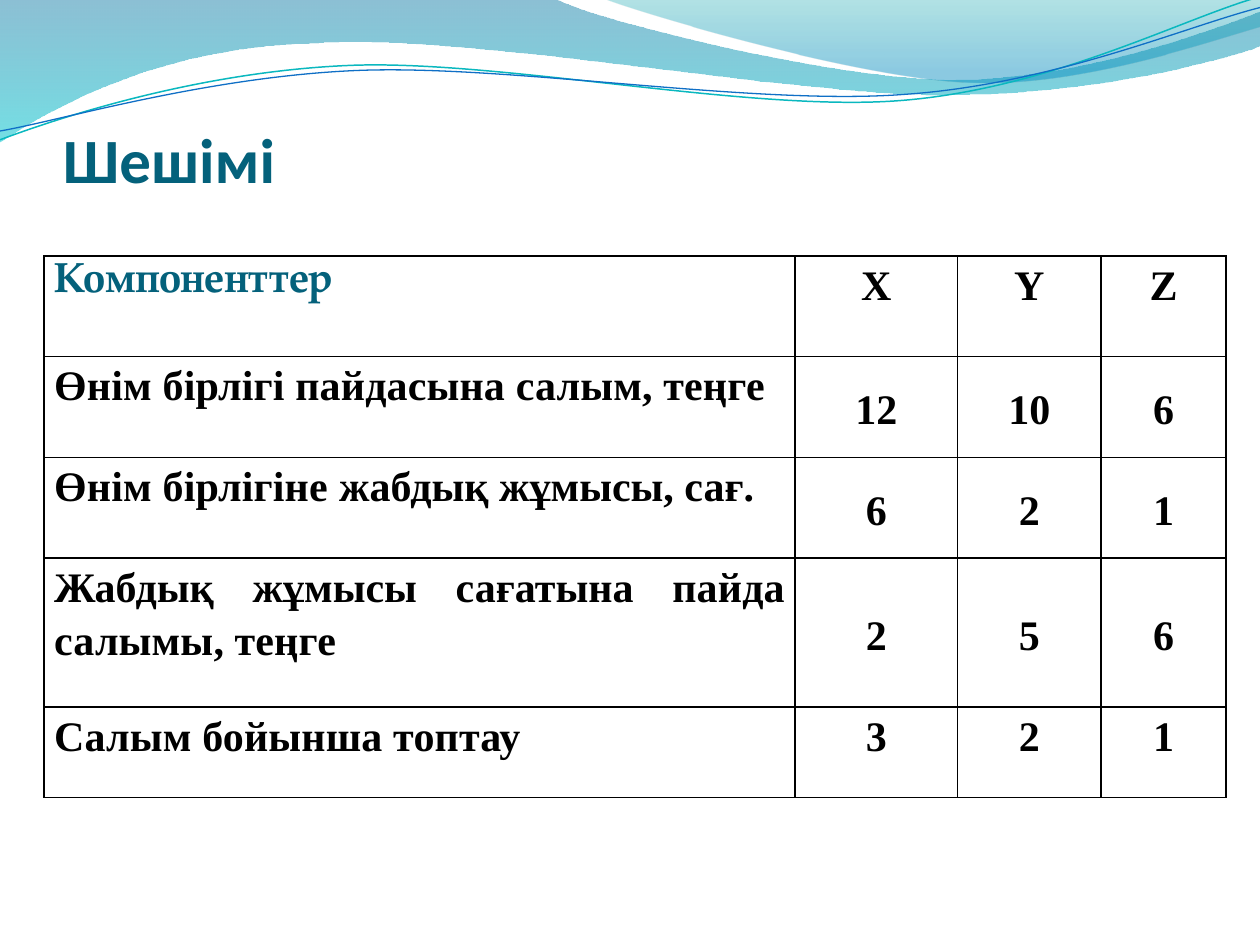
"""Build the solution slide: a wave header, a title and a table of components."""
import itertools
import lxml.etree
import pptx
import pptx.dml.color
import pptx.enum.text
import pptx.oxml.ns
import pptx.util

Inches = pptx.util.Inches
Align = pptx.enum.text.PP_ALIGN
Anchor = pptx.enum.text.MSO_ANCHOR
name = pptx.oxml.ns.qn

THEME = {
    "accent": "04617B", "ink": "000000", "title": 36, "body": 24, "rule": 1,
    "sans": "Calibri", "serif": "Times New Roman", "head": "TeX Gyre Pagella",
    "dark": [(0, "0074A1", 45), (1, "00C6CF", 55)],
    "pale": [(0, "00A1A9", 30), (0.8, "008BBF", 45)],
    "teal": ("0AB8BF", 0.85), "blue": ("0F6FC6", 0.75),
}
WIDE = 10
TITLE = "Шешімі"
HEAD = ["Компоненттер", [("X", WIDE)], [("Y", WIDE)], [("Z", WIDE)]]
BODY = [
    [[("Өнім бірлігі пайдасына салым, теңге", WIDE)], "12", "10", "6"],
    [[("Өнім бірлігіне ", WIDE), ("жабдық жұмысы, сағ.", 0)], "6", "2", "1"],
    [[("Жабдық жұмысы сағатына ", 0), ("пайда салымы", WIDE), (", ", 0),
      ("теңге", WIDE)], "2", "5", "6"],
    [[("Салым бойынша топтау ", WIDE)], "3", "2", "1"],
]
COLS = [5.96, 1.29, 1.14, 0.99]
ROWS = [0.8, 0.8, 0.8, 1.18, 0.72]
WAVES = [
    ("dark", [
        [(0, 0)], [(4.4, -0.01)],
        [(4.76, 0.17), (6.64, 0.63), (7.58, 0.63)],
        [(8.53, 0.63), (9.58, 0.26), (10, 0.09)], [(10.01, 0.36)],
        [(9.83, 0.44), (8.7, 0.76), (7.46, 0.75)],
        [(6.22, 0.75), (3.82, 0.28), (2.57, 0.34)],
        [(1.29, 0.36), (0.46, 0.83), (-0.01, 1.13)], [(0, 0)]]),
    ("pale", [
        [(4.79, -0.01)],
        [(5.09, 0.11), (6.82, 0.62), (7.69, 0.65)],
        [(8.56, 0.69), (9.61, 0.32), (10, 0.21)], [(10, 0)], [(4.79, -0.01)]]),
    ("teal", [
        [(0, 1.11)],
        [(0.48, 0.93), (1.58, 0.57), (2.77, 0.52)],
        [(3.95, 0.47), (5.93, 0.89), (7.13, 0.8)],
        [(8.33, 0.71), (9.38, 0.15), (9.98, -0.02)]]),
    ("blue", [
        [(0, 1.04)],
        [(0.47, 0.96), (1.64, 0.61), (2.83, 0.56)],
        [(4.03, 0.51), (5.97, 0.84), (7.17, 0.75)],
        [(8.36, 0.67), (9.41, 0.21), (10, 0.06)]]),
]


def rgb(code):
    """Return a colour from its hex code."""
    return pptx.dml.color.RGBColor.from_string(code)


def sub(node, tag, **attrs):
    """Add a drawing element below a node."""
    return lxml.etree.SubElement(node, name("a:" + tag), **attrs)


def write(frame, text, size, font, color="ink", align=Align.LEFT, space=1, kern=0):
    """Write one bold paragraph, given as text or as (text, spacing) parts."""
    para = frame.paragraphs[0]
    para.alignment, para.line_spacing = align, space
    for part, gap in [(text, 0)] if isinstance(text, str) else text:
        run = para.add_run()
        run.text = part
        run.font.size, run.font.bold = pptx.util.Pt(THEME[size]), True
        run.font.name = THEME[font]
        run.font.color.rgb = rgb(THEME[color])
        props = run._r.get_or_add_rPr()
        if gap:
            props.set("spc", str(gap))
        if kern:
            props.set("kern", str(kern))


def bend(shape, segs):
    """Join each triple of line steps into one cubic curve."""
    steps = list(shape.element.iter(name("a:lnTo")))
    for seg in segs[1:]:
        group, steps = steps[:len(seg)], steps[len(seg):]
        if len(seg) == 3:
            curve = lxml.etree.Element(name("a:cubicBezTo"))
            group[0].addprevious(curve)
            for step in group:
                curve.append(step[0])
                step.getparent().remove(step)


def wave(slide, style, segs):
    """Draw a shaded band or a thin open curve."""
    look = THEME[style]
    band = isinstance(look, list)
    pts = [(Inches(x), Inches(y)) for x, y in itertools.chain(*segs)]
    pen = slide.shapes.build_freeform(*pts[0])
    pen.add_line_segments(pts[1:], close=band)
    shape = pen.convert_to_shape()
    bend(shape, segs)
    shape.shadow.inherit = False
    if not band:
        shape.fill.background()
        shape.line.color.rgb = rgb(look[0])
        shape.line.width = pptx.util.Pt(look[1])
        return
    shape.line.fill.background()
    shape.fill.gradient()
    shape.fill.gradient_angle = 270
    for stop, (pos, code, alpha) in zip(shape.fill.gradient_stops, look):
        stop.position = pos
        stop.color.rgb = rgb(code)
    nodes = shape.element.spPr.iter(name("a:srgbClr"))
    for node, (pos, code, alpha) in zip(nodes, look):
        sub(node, "alpha", val=str(alpha * 1000))


def frame(cell):
    """Give a cell thin borders, no fill and narrow margins."""
    props = cell._tc.get_or_add_tcPr()
    for side in "LRTB":
        line = sub(props, "ln" + side, w=str(pptx.util.Pt(THEME["rule"])))
        sub(sub(line, "solidFill"), "srgbClr", val=THEME["ink"])
    cell.fill.background()
    cell.margin_left = cell.margin_right = Inches(0.08)
    cell.margin_top = cell.margin_bottom = 0


def grid(slide):
    """Add the table of components."""
    table = slide.shapes.add_table(
        len(ROWS), len(COLS), Inches(0.35), Inches(2.03),
        Inches(sum(COLS)), Inches(sum(ROWS))).table
    table.first_row = table.horz_banding = False
    for col, size in zip(table.columns, COLS):
        col.width = Inches(size)
    for row, size in zip(table.rows, ROWS):
        row.height = Inches(size)
    for r, row in enumerate([HEAD] + BODY):
        for c, text in enumerate(row):
            cell = table.cell(r, c)
            frame(cell)
            mid = c > 0 and 0 < r < len(BODY)
            cell.vertical_anchor = Anchor.MIDDLE if mid else Anchor.TOP
            first = r == c == 0
            align = Align.CENTER if c else Align.LEFT if first else Align.JUSTIFY
            write(cell.text_frame, text, "body", "head" if first else "serif",
                  color="accent" if first else "ink", align=align, space=1.15,
                  kern=1200 if first else 0)


def main():
    """Build and save the slide."""
    deck = pptx.Presentation()
    deck.slide_width, deck.slide_height = Inches(10), Inches(7.5)
    slide = deck.slides.add_slide(deck.slide_layouts[6])
    for style, segs in WAVES:
        wave(slide, style, segs)
    box = slide.shapes.add_textbox(Inches(0.5), Inches(0.77), Inches(9), Inches(0.79))
    text = box.text_frame
    text.word_wrap = True
    text.vertical_anchor = Anchor.BOTTOM
    text.margin_left = text.margin_right = text.margin_bottom = 0
    write(text, TITLE, "title", "sans", color="accent")
    grid(slide)
    deck.save("out.pptx")


if __name__ == "__main__":
    main()
